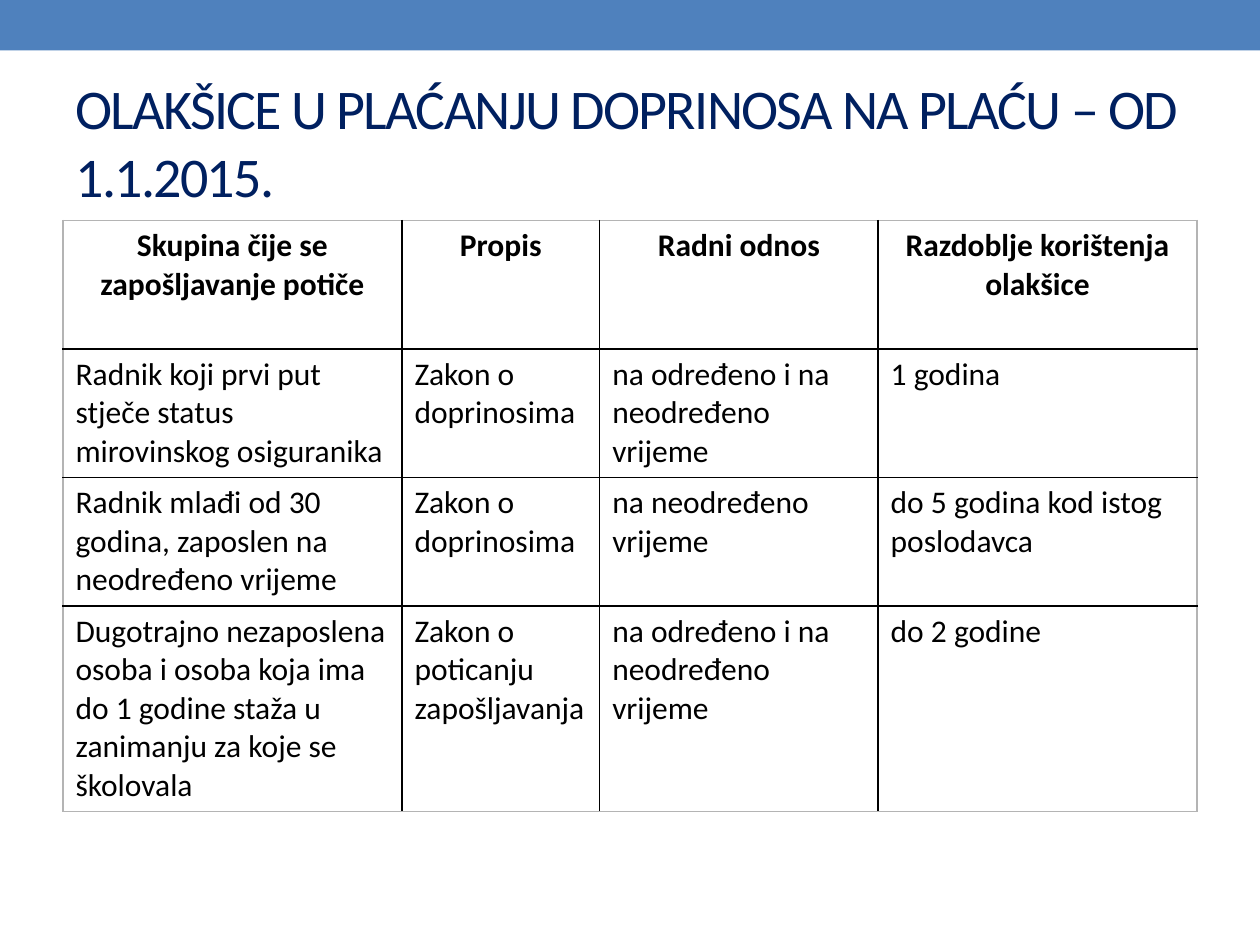
from lxml.etree import SubElement
from pptx import Presentation
from pptx.dml.color import RGBColor
from pptx.enum.shapes import MSO_SHAPE
from pptx.enum.text import MSO_ANCHOR, PP_ALIGN
from pptx.oxml.ns import qn
from pptx.util import Inches, Pt

BLUE = RGBColor(0x4F, 0x81, 0xBD)
NAVY = RGBColor(0x00, 0x20, 0x60)
BLACK = RGBColor(0x00, 0x00, 0x00)
GREY = RGBColor(0xB4, 0xB4, 0xB4)
FONT = "Calibri"

TITLE = "OLAKŠICE U PLAĆANJU DOPRINOSA NA PLAĆU – OD 1.1.2015."
ROWS = [
    ["Skupina čije se zapošljavanje potiče", "Propis", "Radni odnos",
     "Razdoblje korištenja olakšice"],
    ["Radnik koji prvi put stječe status mirovinskog osiguranika",
     "Zakon o doprinosima", "na određeno i na neodređeno vrijeme", "1 godina"],
    ["Radnik mlađi od 30 godina, zaposlen na neodređeno vrijeme",
     "Zakon o doprinosima", "na neodređeno vrijeme",
     "do 5 godina kod istog poslodavca"],
    ["Dugotrajno nezaposlena osoba i osoba koja ima do 1 godine staža u "
     "zanimanju za koje se školovala",
     "Zakon o poticanju zapošljavanja", "na određeno i na neodređeno vrijeme",
     "do 2 godine"],
]
COLUMN_WIDTHS = [2.69, 1.57, 2.21, 2.53]
ROW_HEIGHTS = [1.02, 1.02, 1.02, 1.63]


def style_font(font, size, color, bold=False):
    font.name = FONT
    font.size = Pt(size)
    font.bold = bold
    font.color.rgb = color


def add_top_band(slide, left, top, width, height):
    band = slide.shapes.add_shape(MSO_SHAPE.RECTANGLE, left, top, width, height)
    band.shadow.inherit = False
    band.fill.solid()
    band.fill.fore_color.rgb = BLUE
    band.line.fill.background()


def add_title(slide, left, top, width, height):
    frame = slide.shapes.add_textbox(left, top, width, height).text_frame
    frame.word_wrap = True
    frame.vertical_anchor = MSO_ANCHOR.MIDDLE
    paragraph = frame.paragraphs[0]
    run = paragraph.add_run()
    run.text = TITLE
    style_font(paragraph.font, 32, NAVY)
    run.font._element.set("spc", "-100")


def set_borders(cell, colors):
    """Draw the left, right, top and bottom borders in the given colours."""
    properties = cell._tc.get_or_add_tcPr()
    for index, (side, color) in enumerate(zip("LRTB", colors)):
        line = SubElement(properties, qn(f"a:ln{side}"), w=str(Pt(1)))
        fill = SubElement(line, qn("a:solidFill"))
        SubElement(fill, qn("a:srgbClr"), val=str(color))
        properties.insert(index, line)


def add_relief_table(slide, left, top, width, height):
    last_row, last_column = len(ROWS) - 1, len(COLUMN_WIDTHS) - 1
    table = slide.shapes.add_table(last_row + 1, last_column + 1,
                                   left, top, width, height).table
    for column, share in zip(table.columns, COLUMN_WIDTHS):
        column.width = int(width * share / sum(COLUMN_WIDTHS))
    for row, share in zip(table.rows, ROW_HEIGHTS):
        row.height = int(height * share / sum(ROW_HEIGHTS))
    for r, texts in enumerate(ROWS):
        for c, text in enumerate(texts):
            cell = table.cell(r, c)
            cell.text = text
            cell.fill.background()
            paragraph = cell.text_frame.paragraphs[0]
            paragraph.alignment = PP_ALIGN.CENTER if r == 0 else PP_ALIGN.LEFT
            style_font(paragraph.font, 18, BLACK, bold=r == 0)
            outer_sides = (c == 0, c == last_column, r == 0, r == last_row)
            set_borders(cell, [GREY if outer else BLACK for outer in outer_sides])


def main():
    presentation = Presentation()
    presentation.slide_width = Inches(10)
    presentation.slide_height = Inches(7.5)
    slide = presentation.slides.add_slide(presentation.slide_layouts[6])
    margin = Inches(0.5)
    content_width = presentation.slide_width - 2 * margin
    add_top_band(slide, 0, 0, presentation.slide_width, Inches(0.4))
    add_title(slide, margin, Inches(0.58), content_width, Inches(1.08))
    add_relief_table(slide, margin, Inches(1.75), content_width,
                     Inches(sum(ROW_HEIGHTS)))
    presentation.save("out.pptx")


if __name__ == "__main__":
    main()
